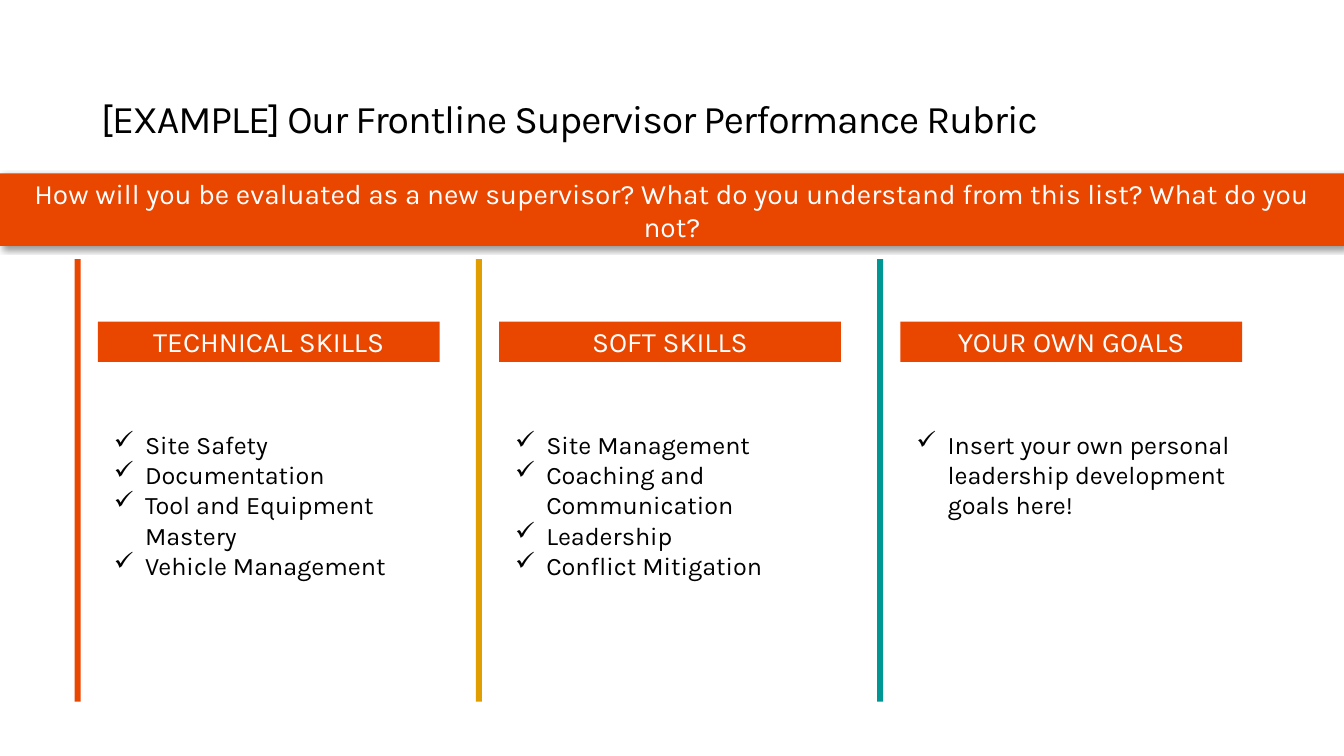
from dataclasses import dataclass

from lxml import etree
from pptx import Presentation
from pptx.dml.color import RGBColor
from pptx.enum.shapes import MSO_SHAPE
from pptx.enum.text import MSO_ANCHOR, MSO_AUTO_SIZE, PP_ALIGN
from pptx.oxml import parse_xml
from pptx.oxml.ns import nsdecls, qn
from pptx.shapes.autoshape import Shape
from pptx.slide import Slide
from pptx.text.text import _Paragraph as Paragraph
from pptx.util import Inches, Pt

RECTANGLE = MSO_SHAPE.RECTANGLE
MIDDLE, BOTTOM = MSO_ANCHOR.MIDDLE, MSO_ANCHOR.BOTTOM
CENTER = PP_ALIGN.CENTER
GROW = MSO_AUTO_SIZE.SHAPE_TO_FIT_TEXT


@dataclass(frozen=True)
class Theme:
    font: str = "Karla"
    orange: str = "E94600"
    gold: str = "E19E00"
    teal: str = "009693"
    white: str = "FFFFFF"
    black: str = "000000"
    title_size: int = 28
    label_size: int = 20
    list_size: int = 18


@dataclass(frozen=True)
class Area:
    left: float
    top: float
    width: float
    height: float

    def shifted(self, distance: float) -> "Area":
        return Area(self.left + distance, self.top, self.width, self.height)

    def lengths(self) -> list[int]:
        return [Inches(n) for n in (self.left, self.top, self.width, self.height)]


@dataclass(frozen=True)
class Column:
    heading: str
    bar_color: str
    items: tuple[str, ...]
    list_height: float


THEME = Theme()
COLUMN_PITCH = 3.98
PANEL = Area(0.78, 2.57, 3.4, 4.5)
BAR = Area(0.74, 2.57, 0.06, 4.39)
HEADING = Area(0.97, 3.19, 3.39, 0.4)
LIST_LEFT, LIST_TOP, LIST_WIDTH = 1.03, 4.21, 3.45
BULLET_INDENT = Inches(0.31)

COLUMNS = (
    Column("TECHNICAL SKILLS", THEME.orange,
           ("Site Safety", "Documentation", "Tool and Equipment Mastery",
            "Vehicle Management"), 1.31),
    Column("SOFT SKILLS", THEME.gold,
           ("Site Management", "Coaching and Communication", "Leadership",
            "Conflict Mitigation"), 1.62),
    Column("YOUR OWN GOALS", THEME.teal,
           ("Insert your own personal leadership development goals here!",), 1.01),
)


def apply_format(target: object, values: dict[str, object]) -> None:
    for name, value in values.items():
        setattr(target, name, value)


def write(para: Paragraph, text: str, size: int, color: str) -> None:
    span = para.add_run()
    span.text = text
    apply_format(span.font, {"name": THEME.font, "size": Pt(size)})
    span.font.color.rgb = RGBColor.from_string(color)


def add_block(page: Slide, area: Area, color: str, label: str = "") -> Shape:
    """Add a borderless rectangle, with a centred white label if one is given."""
    box = page.shapes.add_shape(RECTANGLE, *area.lengths())
    box.shadow.inherit = False
    box.fill.solid()
    box.fill.fore_color.rgb = RGBColor.from_string(color)
    box.line.fill.background()
    if label:
        apply_format(box.text_frame, {"word_wrap": True, "vertical_anchor": MIDDLE})
        para = box.text_frame.paragraphs[0]
        para.alignment = CENTER
        write(para, label, THEME.label_size, THEME.white)
    return box


def add_drop_shadow(box: Shape) -> None:
    effects = box._element.spPr.find(qn("a:effectLst"))
    effects.append(parse_xml(
        f'<a:outerShdw {nsdecls("a")} blurRad="{Pt(4)}" dist="{Pt(3)}" '
        f'dir="2700000" algn="tl" rotWithShape="0"><a:srgbClr val="{THEME.black}">'
        '<a:alpha val="40000"/></a:srgbClr></a:outerShdw>'))


def add_title(page: Slide, text: str) -> None:
    box = page.shapes.add_textbox(*Area(1, 0.76, 11.33, 0.65).lengths())
    apply_format(box.text_frame, {
        "word_wrap": True, "vertical_anchor": BOTTOM, "margin_left": 0,
        "margin_right": 0, "margin_top": Inches(0.05), "margin_bottom": 0})
    para = box.text_frame.paragraphs[0]
    para.line_spacing = 0.9
    write(para, text, THEME.title_size, THEME.black)
    para.runs[0]._r.get_or_add_rPr().set("spc", "-80")


def add_checklist(page: Slide, area: Area, items: tuple[str, ...]) -> None:
    box = page.shapes.add_textbox(*area.lengths())
    apply_format(box.text_frame, {"word_wrap": True, "auto_size": GROW})
    for index, item in enumerate(items):
        frame = box.text_frame
        para = frame.add_paragraph() if index else frame.paragraphs[0]
        properties = para._p.get_or_add_pPr()
        properties.set("marL", str(BULLET_INDENT))
        properties.set("indent", str(-BULLET_INDENT))
        etree.SubElement(properties, qn("a:buChar")).set("char", "✓")
        write(para, item, THEME.list_size, THEME.black)


def add_column(page: Slide, column: Column, offset: float) -> None:
    add_block(page, PANEL.shifted(offset), THEME.white)
    add_block(page, BAR.shifted(offset), column.bar_color)
    add_block(page, HEADING.shifted(offset), THEME.orange, column.heading)
    list_area = Area(LIST_LEFT, LIST_TOP, LIST_WIDTH, column.list_height)
    add_checklist(page, list_area.shifted(offset), column.items)


def main() -> None:
    deck = Presentation()
    apply_format(deck, {"slide_width": Inches(13.33), "slide_height": Inches(7.5)})
    page = deck.slides.add_slide(deck.slide_layouts[6])
    add_title(page, "[EXAMPLE] Our Frontline Supervisor Performance Rubric")
    banner = add_block(
        page, Area(0, 1.72, 13.33, 0.72), THEME.orange,
        "How will you be evaluated as a new supervisor? "
        "What do you understand from this list? What do you not?")
    add_drop_shadow(banner)
    for index, column in enumerate(COLUMNS):
        add_column(page, column, index * COLUMN_PITCH)
    deck.save("out.pptx")


if __name__ == "__main__":
    main()
